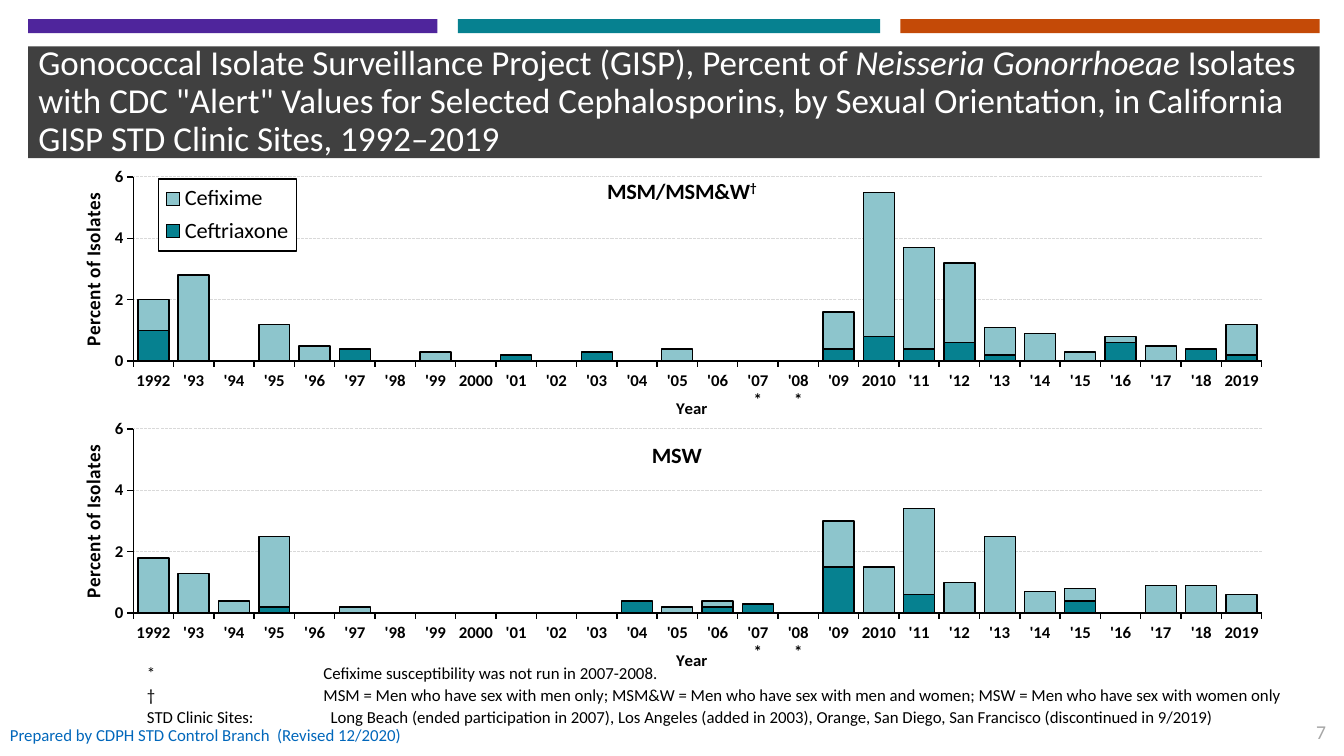
from lxml.etree import SubElement
from pptx import Presentation
from pptx.chart.data import CategoryChartData
from pptx.dml.color import RGBColor
from pptx.enum.chart import XL_CHART_TYPE as ChartType, XL_LEGEND_POSITION as LegendPosition
from pptx.enum.chart import XL_TICK_MARK as TickMark
from pptx.enum.dml import MSO_LINE as Dash
from pptx.enum.shapes import MSO_SHAPE as Shape
from pptx.enum.text import MSO_ANCHOR as Anchor, MSO_AUTO_SIZE as AutoSize, PP_ALIGN as Align
from pptx.oxml import parse_xml
from pptx.oxml.ns import nsdecls, qn
from pptx.util import Inches, Pt

FONT = "Calibri"
BLACK, WHITE, BLUE = "000000", "FFFFFF", "0167BB"
BARS = [(0.28, 4.06, "4F259C"), (4.54, 4.19, "068190"), (8.93, 4.16, "C44A07")]
DRUGS = {"Ceftriaxone": "068190", "Cefixime": "8DC5CC"}
NOT_RUN = (2007, 2008)
YEARS = [
    (str(year) if year in (1992, 2000, 2010, 2019) else f"'{year % 100:02d}")
    + ("\n*" if year in NOT_RUN else "")
    for year in range(1992, 2020)
]
MSM_VALUES = [
    [1, 0, 0, 0, 0, 0.4, 0, 0, 0, 0.2, 0, 0.3, 0, 0, 0, 0, 0, 0.4, 0.8, 0.4,
     0.6, 0.2, 0, 0, 0.6, 0, 0.4, 0.2],
    [1, 2.8, 0, 1.2, 0.5, 0, 0, 0.3, 0, 0, 0, 0, 0, 0.4, 0, 0, 0, 1.2, 4.7, 3.3,
     2.6, 0.9, 0.9, 0.3, 0.2, 0.5, 0, 1],
]
MSW_VALUES = [
    [0, 0, 0, 0.2, 0, 0, 0, 0, 0, 0, 0, 0, 0.4, 0, 0.2, 0.3, 0, 1.5, 0, 0.6,
     0, 0, 0, 0.4, 0, 0, 0, 0],
    [1.8, 1.3, 0.4, 2.3, 0, 0.2, 0, 0, 0, 0, 0, 0, 0, 0.2, 0.2, 0, 0, 1.5, 1.5, 2.8,
     1, 2.5, 0.7, 0.4, 0, 0.9, 0.9, 0.6],
]
FOOTNOTES = [
    ("*", "Cefixime susceptibility was not run in 2007-2008.", 1.75),
    ("†", "MSM = Men who have sex with men only; MSM&W = Men who have sex with men and "
          "women; MSW = Men who have sex with women only", 1.75),
    ("STD Clinic Sites:", "Long Beach (ended participation in 2007), Los Angeles (added in "
                          "2003), Orange, San Diego, San Francisco (discontinued in 9/2019)", 1.82),
]


def color(value):
    return RGBColor.from_string(value)


def style_font(font, size, shade=BLACK, bold=False, name=FONT):
    font.name, font.size, font.bold = name, Pt(size), bold
    font.color.rgb = color(shade)


def style_line(line, shade, width):
    line.color.rgb = color(shade)
    line.width = Pt(width)


def add_span(para, text, size, shade=BLACK, bold=False):
    span = para.add_run()
    span.text = text
    style_font(span.font, size, shade, bold)
    return span


def add_text_box(slide, box, anchor=Anchor.TOP, wrap=True):
    frame = slide.shapes.add_textbox(*map(Inches, box)).text_frame
    frame.word_wrap, frame.vertical_anchor = wrap, anchor
    return frame


def add_bars(slide, top, height):
    for left, width, shade in BARS:
        bar = slide.shapes.add_shape(Shape.RECTANGLE, *map(Inches, (left, top, width, height)))
        bar.shadow.inherit = False
        bar.fill.solid()
        bar.fill.fore_color.rgb = color(shade)
        bar.line.fill.background()


def fill_title(slide, box):
    title = slide.shapes.title
    title.left, title.top, title.width, title.height = map(Inches, box)
    title.fill.solid()
    title.fill.fore_color.rgb = color("404040")
    frame = title.text_frame
    frame.auto_size, frame.word_wrap = AutoSize.NONE, True
    frame.vertical_anchor = Anchor.MIDDLE
    para = frame.paragraphs[0]
    para.alignment, para.line_spacing = Align.LEFT, 0.9
    add_span(para, "Gonococcal Isolate Surveillance Project (GISP), Percent of ", 25, WHITE)
    add_span(para, "Neisseria Gonorrhoeae ", 25, WHITE).font.italic = True
    add_span(para, 'Isolates with CDC "Alert" Values for Selected Cephalosporins, by Sexual '
                   "Orientation, in California GISP STD Clinic Sites, 1992–2019", 25, WHITE)


def set_layout(element, after=None, inner=False, **places):
    """Place a chart part by fractions of the chart; x and y, optionally w and h."""
    for old in element.findall(qn("c:layout")):
        element.remove(old)
    layout = parse_xml(f"<c:layout {nsdecls('c')}/>")
    manual = SubElement(layout, qn("c:manualLayout"))
    if inner:
        SubElement(manual, qn("c:layoutTarget")).set("val", "inner")
    for axis in ("x", "y"):
        SubElement(manual, qn(f"c:{axis}Mode")).set("val", "edge")
    for key, value in places.items():
        SubElement(manual, qn(f"c:{key}")).set("val", str(value))
    if after:
        element.find(qn(after)).addnext(layout)
    else:
        element.insert(0, layout)


def style_axis(axis, title, title_size, x, y):
    axis.major_tick_mark, axis.minor_tick_mark = TickMark.OUTSIDE, TickMark.NONE
    style_font(axis.tick_labels.font, 12, bold=True)
    style_line(axis.format.line, BLACK, 1.06)
    add_span(axis.axis_title.text_frame.paragraphs[0], title, title_size, bold=True)
    set_layout(axis.axis_title._element, "c:tx", x=x, y=y)


def add_legend(chart):
    chart.has_legend = True
    legend = chart.legend
    legend.position, legend.include_in_layout = LegendPosition.LEFT, False
    style_font(legend.font, 16)
    set_layout(legend._element, "c:legendPos", x=0.09, y=0.07, w=0.11, h=0.28)
    frame = parse_xml(
        f'<c:spPr {nsdecls("c", "a")}><a:solidFill><a:srgbClr val="{WHITE}"/></a:solidFill>'
        f'<a:ln w="12700"><a:solidFill><a:srgbClr val="{BLACK}"/></a:solidFill></a:ln></c:spPr>')
    legend._element.find(qn("c:txPr")).addprevious(frame)


def add_isolate_chart(slide, box, name, values, title_x, title_y, mark=""):
    data = CategoryChartData(number_format="0.0")
    data.categories = YEARS
    for drug, numbers in zip(DRUGS, values):
        data.add_series(drug, numbers)
    chart = slide.shapes.add_chart(ChartType.COLUMN_STACKED, *map(Inches, box), data).chart
    style_font(chart.font, 19.6, bold=True, name="Times New Roman")
    chart.has_legend = False

    para = chart.chart_title.text_frame.paragraphs[0]
    add_span(para, name, 16, bold=True)
    if mark:
        add_span(para, mark, 16, bold=True).font._element.set("baseline", "30000")
    chart.chart_title.include_in_layout = True
    set_layout(chart.chart_title._element, "c:tx", x=title_x, y=title_y)

    plot = chart.plots[0]
    plot.gap_width, plot.overlap, plot.vary_by_categories = 30, 100, False
    for series, shade in zip(plot.series, DRUGS.values()):
        series.format.fill.solid()
        series.format.fill.fore_color.rgb = color(shade)
        style_line(series.format.line, BLACK, 1)
    set_layout(chart._chartSpace.chart.plotArea, inner=True, x=0.07, y=0.061, w=0.899, h=0.721)

    style_axis(chart.category_axis, "Year", 12, 0.5, 0.91)
    scale = chart.value_axis
    style_axis(scale, "Percent of Isolates", 14, 0.024, 0.125)
    turned = scale.axis_title._element.find(".//" + qn("a:bodyPr"))
    turned.set("rot", "-5400000")
    turned.set("vert", "horz")
    scale.minimum_scale, scale.maximum_scale, scale.major_unit = 0, 6, 2
    scale.tick_labels.number_format = "#,##0"
    scale.tick_labels.number_format_is_linked = False
    grid = scale.major_gridlines.format.line
    style_line(grid, "D9D9D9", 0.75)
    grid.dash_style = Dash.SQUARE_DOT
    return chart


def add_footnotes(slide, box):
    frame = add_text_box(slide, box)
    for index, (mark, note, indent) in enumerate(FOOTNOTES):
        para = frame.add_paragraph() if index else frame.paragraphs[0]
        para.space_after = Pt(1)
        properties = para._p.get_or_add_pPr()
        properties.set("marL", str(Inches(indent)))
        properties.set("indent", str(-Inches(indent)))
        add_span(para, f"{mark}\t{note}", 12)


def add_footer(slide, top):
    for left, width, text in ((0, 2.8, "Prepared by CDPH STD Control Branch"),
                              (2.65, 1.5, "(Revised 12/2020)")):
        frame = add_text_box(slide, (left, top, width, 0.4), Anchor.MIDDLE)
        add_span(frame.paragraphs[0], text, 12, BLUE)
    para = add_text_box(slide, (12.82, top, 0.43, 0.34), wrap=False).paragraphs[0]
    para.alignment = Align.RIGHT
    add_span(para, "7", 14, "A6A6A6")


def main():
    deck = Presentation()
    deck.slide_width, deck.slide_height = Inches(13.33), Inches(7.5)
    slide = deck.slides.add_slide(deck.slide_layouts[5])
    add_bars(slide, 0.19, 0.14)
    fill_title(slide, (0.28, 0.46, 12.81, 1.11))
    msm_chart = add_isolate_chart(slide, (0.45, 1.6, 12.45, 2.6), "MSM/MSM&W", MSM_VALUES,
                                  0.445, 0.05, mark="†")
    add_legend(msm_chart)
    add_isolate_chart(slide, (0.45, 4.1, 12.45, 2.6), "MSW", MSW_VALUES, 0.48, 0.09)
    add_footnotes(slide, (1.36, 6.53, 11.97, 0.73))
    add_footer(slide, 7.09)
    deck.save("out.pptx")


if __name__ == "__main__":
    main()
